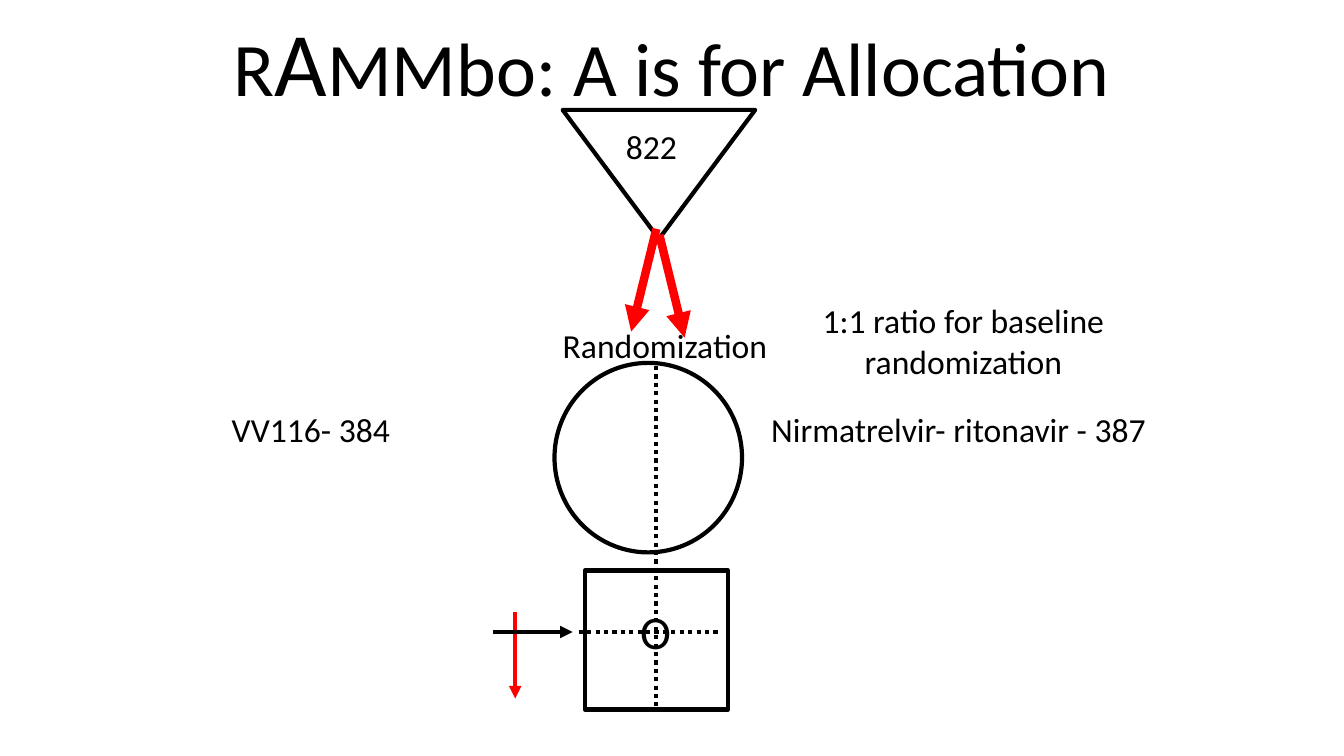
from lxml import etree
from pptx import Presentation
from pptx.dml.color import RGBColor
from pptx.enum import dml, shapes, text
from pptx.oxml.ns import qn
from pptx.util import Inches, Pt

COLORS = {"ink": "000000", "arrow": "FF0000"}
FONT = "Calibri"


def add_text(slide, box, content, size=24, align=text.PP_ALIGN.LEFT,
             anchor=text.MSO_ANCHOR.TOP, wrap=True):
    """Add one paragraph; content is a string or a list of (string, size) runs."""
    tf = slide.shapes.add_textbox(*map(Inches, box)).text_frame
    tf.word_wrap = wrap
    tf.vertical_anchor = anchor
    p = tf.paragraphs[0]
    p.alignment = align
    runs = [(content, size)] if isinstance(content, str) else content
    for words, run_size in runs:
        r = p.add_run()
        r.text = words
        r.font.name = FONT
        r.font.size = Pt(run_size)
        r.font.color.rgb = RGBColor.from_string(COLORS["ink"])


def style_line(line, color, width):
    line.color.rgb = RGBColor.from_string(COLORS[color])
    line.width = Pt(width)


def add_outline(slide, kind, box, rotation=0):
    """Add an unfilled preset shape."""
    sp = slide.shapes.add_shape(kind, *map(Inches, box))
    sp.shadow.inherit = False
    sp.fill.background()
    sp.rotation = rotation
    style_line(sp.line, "ink", 3)


def add_line(slide, start, end, color="ink", width=3, dotted=False, arrow=False):
    c = slide.shapes.add_connector(shapes.MSO_CONNECTOR.STRAIGHT,
                                   *map(Inches, start + end))
    style_line(c.line, color, width)
    if dotted:
        c.line.dash_style = dml.MSO_LINE.ROUND_DOT
    if arrow:
        ln = c.line._get_or_add_ln()
        etree.SubElement(ln, qn("a:tailEnd"), type="triangle")
    etree.SubElement(c._element.spPr, qn("a:effectLst"))


def add_diagram(slide):
    kinds = shapes.MSO_SHAPE
    add_line(slide, (5.11, 6.07), (5.11, 6.93), "arrow", arrow=True)
    add_outline(slide, kinds.OVAL, (5.5, 3.6, 1.86, 1.88))
    add_outline(slide, kinds.RECTANGLE, (5.8, 5.66, 1.42, 1.38))
    add_line(slide, (6.51, 3.63), (6.51, 7), dotted=True)
    add_line(slide, (5.74, 6.27), (7.13, 6.27), dotted=True)
    add_line(slide, (4.89, 6.27), (5.68, 6.27), arrow=True)
    add_outline(slide, kinds.ISOSCELES_TRIANGLE, (5.58, 1.09, 1.91, 1.28), 180)
    for start, end in (((6.51, 2.27), (6.26, 3.29)), ((6.54, 2.33), (6.79, 3.35))):
        add_line(slide, start, end, "arrow", 6, arrow=True)


def add_labels(slide):
    center = text.PP_ALIGN.CENTER
    add_text(slide, (1.06, 0, 11.21, 1.2),
             [("R", 54), ("A", 64.8), ("MMbo: A is for Allocation", 54)],
             align=center, anchor=text.MSO_ANCHOR.MIDDLE)
    add_text(slide, (2.2, 4.01, 2.5, 0.51), "VV116- 384")
    add_text(slide, (7.55, 4.01, 4.29, 0.51), "Nirmatrelvir- ritonavir - 387")
    add_text(slide, (6.25, 5.93, 0.52, 0.67), "O", 33.3, wrap=False)
    add_text(slide, (6.11, 1.2, 0.72, 0.51), "822", wrap=False)
    add_text(slide, (1.97, 3.17, 9.25, 0.51), "Randomization", align=center)
    add_text(slide, (7.89, 2.93, 3.33, 0.91),
             "1:1 ratio for baseline randomization", align=center)


def main():
    prs = Presentation()
    prs.slide_width, prs.slide_height = Inches(13.33), Inches(7.5)
    slide = prs.slides.add_slide(prs.slide_layouts[6])
    add_diagram(slide)
    add_labels(slide)
    prs.save("out.pptx")


if __name__ == "__main__":
    main()
